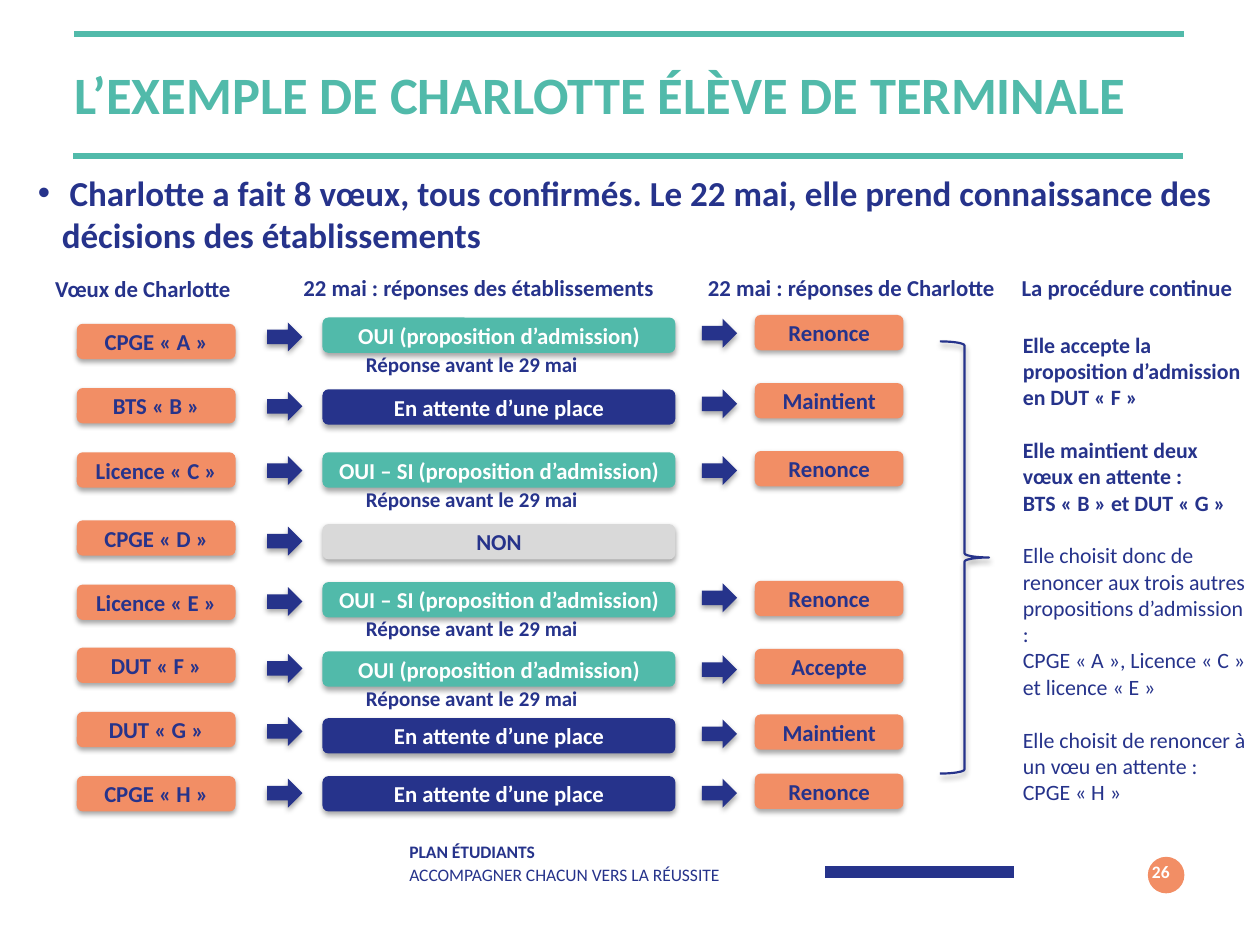
from lxml import etree
from pptx import Presentation
from pptx import util as u
from pptx.dml.color import RGBColor
from pptx.enum import shapes, text
from pptx.oxml.ns import qn

TEAL, NAVY, CORAL, GREY, WHITE = "51BAAA", "26338B", "F28E65", "D9D9D9", "FFFFFF"
YES, MAYBE = "OUI (proposition d’admission)", "OUI – SI (proposition d’admission)"
WAIT, NO = "En attente d’une place", "NON"
ANSWERS = {YES: (TEAL, WHITE), MAYBE: (TEAL, WHITE), WAIT: (NAVY, WHITE), NO: (GREY, NAVY)}
WISHES = [
    ("CPGE « A »", YES, "Renonce", (25.7, 25.6, 25.2, 25.3, 25)),
    ("BTS « B »", WAIT, "Maintient", (30.8, 31.1, 30.9, 30.9, 30.4)),
    ("Licence « C »", MAYBE, "Renonce", (35.9, 36.2, 35.9, 36.2, 35.8)),
    ("CPGE « D »", NO, None, (41.3, 41.8, 41.6, 0, 0)),
    ("Licence « E »", MAYBE, "Renonce", (46.4, 46.6, 46.2, 46.3, 46.1)),
    ("DUT « F »", YES, "Accepte", (51.4, 51.9, 51.7, 52, 51.5)),
    ("DUT « G »", WAIT, "Maintient", (56.5, 56.9, 57, 57.1, 56.7)),
    ("CPGE « H »", WAIT, "Renonce", (61.6, 61.8, 61.6, 61.8, 61.4)),
]
HEADERS = [
    ("Vœux de Charlotte", 3.4, 21.3, 21.3),
    ("22 mai : réponses des établissements", 23.1, 21.2, 31.5),
    ("22 mai : réponses de Charlotte", 55.2, 21.2, 25.2),
    ("La procédure continue", 80.1, 21.2, 18.9),
]
OUTCOME = [
    ("Elle accepte la proposition d’admission en DUT « F »", True, False),
    ("Elle maintient deux vœux en attente :", True, True),
    ("BTS « B » et DUT « G »", True, False),
    ("Elle choisit donc de renoncer aux trois autres propositions d’admission :", False, True),
    ("CPGE « A », Licence « C » et licence « E »", False, False),
    ("Elle choisit de renoncer à un vœu en attente :", False, True),
    ("CPGE « H »", False, False),
]


def rgb(value):
    """Return the colour of a hex string."""
    return RGBColor.from_string(value)


class Deck:
    """Hold the style and the current slide, on a grid of 100 columns by 75 rows."""

    font = "Calibri"

    def __init__(self):
        """Open a deck with one title-and-content slide."""
        self.prs = Presentation()
        self.prs.slide_width, self.prs.slide_height = u.Inches(10), u.Inches(7.5)
        self.col, self.row = self.prs.slide_width / 100, self.prs.slide_height / 75
        self.s = self.prs.slides.add_slide(self.prs.slide_layouts[1])

    def box(self, x, y, w, h):
        """Turn columns and rows into lengths."""
        return [u.Emu(round(n * step)) for n, step in zip((x, y, w, h), (self.col, self.row) * 2)]

    def run(self, p, words, size, color=NAVY, bold=True):
        """Add one formatted run."""
        r = p.add_run()
        r.text = words
        f = r.font
        f.name, f.size, f.bold, f.color.rgb = self.font, u.Pt(size), bold, rgb(color)

    def holder(self, index, place):
        """Move a placeholder and return its text frame and first paragraph."""
        sp = self.s.placeholders[index]
        sp.left, sp.top, sp.width, sp.height = self.box(*place)
        tf = sp.text_frame
        tf.auto_size, tf.word_wrap = text.MSO_AUTO_SIZE.NONE, True
        return tf, tf.paragraphs[0]

    def title(self, words, place):
        """Fill the title."""
        tf, p = self.holder(0, place)
        tf.vertical_anchor = text.MSO_ANCHOR.MIDDLE
        p.alignment, p.line_spacing = text.PP_ALIGN.LEFT, u.Pt(28)
        self.run(p, words, 30, TEAL)

    def body(self, words, place):
        """Fill the body with one bulleted line."""
        tf, p = self.holder(1, place)
        tf.vertical_anchor, tf.margin_top = text.MSO_ANCHOR.TOP, u.Inches(0.44)
        pPr = p._p.get_or_add_pPr()
        pPr.set("marL", str(u.Inches(0.19)))
        pPr.set("indent", str(u.Inches(-0.19)))
        p.space_before = u.Pt(0)
        etree.SubElement(pPr, qn("a:buChar"), char="•")
        self.run(p, words, 20)

    def label(self, place, words=None, size=13, color=NAVY, middle=False, align=None):
        """Add a text box and return its text frame."""
        tf = self.s.shapes.add_textbox(*self.box(*place)).text_frame
        tf.word_wrap = True
        if middle:
            tf.vertical_anchor = text.MSO_ANCHOR.MIDDLE
        else:
            tf.auto_size = text.MSO_AUTO_SIZE.SHAPE_TO_FIT_TEXT
        if words:
            tf.paragraphs[0].alignment = align
            self.run(tf.paragraphs[0], words, size, color)
        return tf

    def outcome(self, place, lines):
        """Add the paragraphs of the last column."""
        tf = self.label(place)
        for i, (words, bold, gap) in enumerate(lines):
            p = tf.add_paragraph() if i else tf.paragraphs[0]
            p.space_before = u.Pt(15.25 if gap else 0)
            self.run(p, words, 12.5, bold=bold)

    def footer(self, place, head, tail):
        """Add the two footer lines."""
        p = self.label(place, middle=True).paragraphs[0]
        p.line_spacing = u.Pt(13.2)
        self.run(p, head, 10)
        p.add_line_break()
        self.run(p, tail, 10, bold=False)

    def shape(self, kind, place, fill=None, words=None, color=NAVY, shadow=True):
        """Add a preset shape, outlined when it has no fill."""
        sp = self.s.shapes.add_shape(kind, *self.box(*place))
        sp.shadow.inherit = False
        if fill:
            sp.fill.solid()
            sp.fill.fore_color.rgb = rgb(fill)
            sp.line.fill.background()
        else:
            sp.fill.background()
            sp.line.color.rgb, sp.line.width = rgb(NAVY), u.Pt(1.25)
        if shadow:
            effects = sp._element.spPr.find(qn("a:effectLst"))
            outer = etree.SubElement(effects, qn("a:outerShdw"), blurRad=str(u.Pt(3.1)),
                                     dist=str(u.Pt(1.8)), dir="5400000", rotWithShape="0")
            black = etree.SubElement(outer, qn("a:srgbClr"), val="000000")
            etree.SubElement(black, qn("a:alpha"), val="35000")
        if words:
            tf = sp.text_frame
            tf.vertical_anchor = text.MSO_ANCHOR.MIDDLE
            tf.paragraphs[0].alignment = text.PP_ALIGN.CENTER
            self.run(tf.paragraphs[0], words, 13, color)

    def pill(self, x, y, w, words, fill, color=NAVY):
        """Add a rounded label."""
        self.shape(shapes.MSO_SHAPE.ROUNDED_RECTANGLE, (x, y, w, 2.8), fill, words, color)

    def arrow(self, x, y):
        """Add a block arrow pointing right."""
        self.shape(shapes.MSO_SHAPE.RIGHT_ARROW, (x, y, 2.8, 2.3), NAVY)

    def rule(self, x, y, w, color, width):
        """Add a horizontal line."""
        left, top, length, _ = self.box(x, y, w, 0)
        sp = self.s.shapes.add_connector(shapes.MSO_CONNECTOR.STRAIGHT, left, top, left + length, top)
        sp.line.color.rgb, sp.line.width = rgb(color), u.Pt(width)
        etree.SubElement(sp._element.spPr, qn("a:effectLst"))


def main():
    """Build the slide."""
    d = Deck()
    d.shape(shapes.MSO_SHAPE.OVAL, (91.1, 68, 2.9, 2.9), CORAL, shadow=False)
    d.footer((31.5, 64.7, 50.5, 7.4), "PLAN ÉTUDIANTS", "ACCOMPAGNER CHACUN VERS LA RÉUSSITE")
    d.rule(65.5, 69.2, 15, NAVY, 7.25)
    d.rule(5.8, 12.4, 88.1, TEAL, 3.25)
    d.rule(5.9, 2.7, 88.1, TEAL, 3.25)
    d.title("L’EXEMPLE DE CHARLOTTE ÉLÈVE DE TERMINALE", (4.9, 0.9, 86.2, 14.1))
    d.label((88.9, 67.2, 4.9, 4), "26", 10, WHITE, True, text.PP_ALIGN.RIGHT)
    d.body(" Charlotte a fait 8 vœux, tous confirmés. Le 22 mai, elle prend connaissance des "
           "décisions des établissements", (2, 9.2, 97.7, 12.9))
    for words, x, y, w in HEADERS:
        d.label((x, y, w, 3.2), words)
    for wish, answer, reply, (wish_y, first_y, answer_y, second_y, reply_y) in WISHES:
        d.pill(6.1, wish_y, 12.6, wish, CORAL)
        d.arrow(21.2, first_y)
        d.pill(25.6, answer_y, 28, answer, *ANSWERS[answer])
        if answer in (YES, MAYBE):
            d.label((28.05, answer_y + 2.2, 21.3, 3), "Réponse avant le 29 mai", 12)
        if reply:
            d.arrow(55.7, second_y)
            d.pill(59.9, reply_y, 11.8, reply, CORAL)
    d.shape(shapes.MSO_SHAPE.RIGHT_BRACE, (74.6, 27.1, 3.9, 34.3))
    d.outcome((80.2, 25.8, 19.7, 39.8), OUTCOME)
    d.prs.save("out.pptx")


if __name__ == "__main__":
    main()
